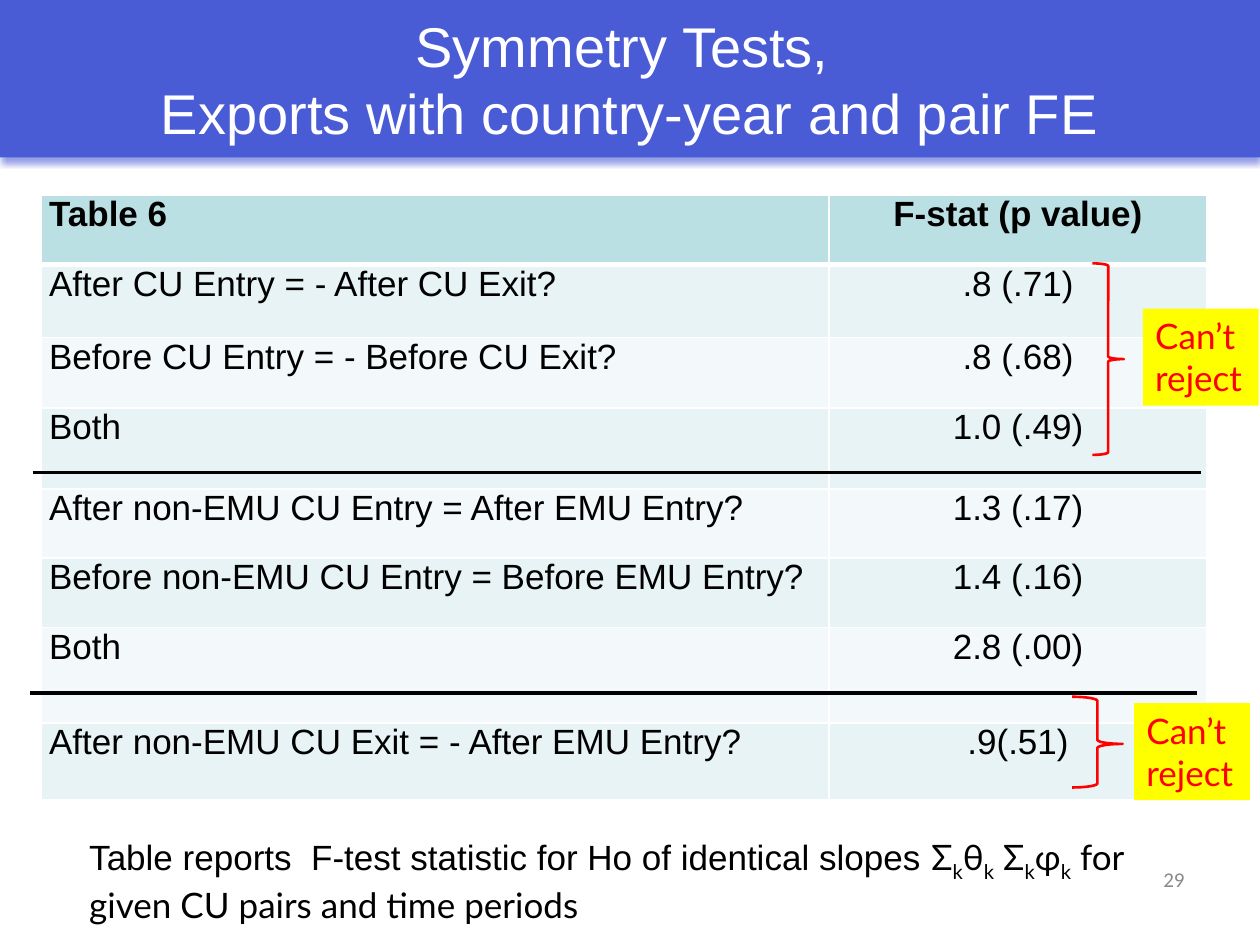
from dataclasses import dataclass

from lxml import etree
from pptx import Presentation
from pptx import util as u
from pptx.dml.color import RGBColor
from pptx.enum import shapes, text
from pptx.oxml import ns

Inches, Pt = u.Inches, u.Pt


@dataclass(frozen=True)
class Theme:
    banner: str = "4A5BD6"
    header: str = "BBE0E3"
    bands: tuple = ("E7F3F4", "F3F9FA")
    white: str = "FFFFFF"
    ink: str = "000000"
    accent: str = "FF0000"
    highlight: str = "FFFF00"
    muted: str = "898989"
    title_size: int = 32
    body_size: int = 20
    number_size: int = 12
    main_font: str = "Arial"
    note_font: str = "Lato"
    number_font: str = "Calibri"


THEME = Theme()

TESTS = [
    ("Table 6", "F-stat (p value)"),
    ("After CU Entry = - After CU Exit?", ".8 (.71)"),
    ("Before CU Entry = - Before CU Exit?", ".8 (.68)"),
    ("Both", "1.0 (.49)"),
    ("After non-EMU CU Entry = After EMU Entry?", "1.3 (.17)"),
    ("Before non-EMU CU Entry = Before EMU Entry?", "1.4 (.16)"),
    ("Both", "2.8 (.00)"),
    ("After non-EMU CU Exit = - After EMU Entry?", ".9(.51)"),
]
COLUMN_WIDTHS = (6.25, 3)
ROW_HEIGHTS = (0.55, 0.58, 0.56, 0.64, 0.55, 0.55, 0.76, 0.61)


def box(*lengths):
    return [Inches(length) for length in lengths]


def apply(target, formats):
    for name, value in formats.items():
        setattr(target, name, value)


def paint(fill, color):
    fill.solid()
    fill.fore_color.rgb = RGBColor.from_string(color)


def style_font(font, size, face, color, bold=False):
    apply(font, {"size": Pt(size), "name": face, "bold": bold, "italic": False})
    font.color.rgb = RGBColor.from_string(color)


def add_child(parent, tag, **attributes):
    return etree.SubElement(parent, ns.qn(tag), attributes)


def add_title(slide, wording):
    title = slide.shapes.title
    apply(title, dict(zip(("left", "top", "width", "height"), box(0, 0, 10, 1.25))))
    paint(title.fill, THEME.banner)
    frame = title.text_frame
    frame.text = wording
    apply(frame, {"word_wrap": True, "auto_size": text.MSO_AUTO_SIZE.NONE,
                  "vertical_anchor": text.MSO_ANCHOR.MIDDLE})
    paragraph = frame.paragraphs[0]
    paragraph.alignment = text.PP_ALIGN.CENTER
    for run in paragraph.runs:
        style_font(run.font, THEME.title_size, THEME.main_font, THEME.white)
    # Soft shadow below the banner
    effects = add_child(title._element.spPr, "a:effectLst")
    shadow = add_child(effects, "a:outerShdw", blurRad="40000", dist="40000",
                       dir="5400000", rotWithShape="0")
    color = add_child(shadow, "a:srgbClr", val=THEME.banner)
    add_child(color, "a:alpha", val="60000")


def border_cell(cell, bottom_width):
    properties = cell._tc.get_or_add_tcPr()
    widths = {"a:lnL": 1, "a:lnR": 1, "a:lnT": 1, "a:lnB": bottom_width}
    for position, (tag, width) in enumerate(widths.items()):
        edge = etree.Element(ns.qn(tag), w=str(Pt(width)))
        add_child(add_child(edge, "a:solidFill"), "a:srgbClr", val=THEME.white)
        properties.insert(position, edge)


def add_test_table(slide):
    table = slide.shapes.add_table(len(TESTS), len(COLUMN_WIDTHS),
                                   *box(0.33, 1.55, 9.25, 4.79)).table
    for column, width in zip(table.columns, COLUMN_WIDTHS):
        column.width = Inches(width)
    alignments = (text.PP_ALIGN.LEFT, text.PP_ALIGN.CENTER)
    margins = {"margin_left": Inches(0.06), "margin_right": Inches(0.06),
               "margin_top": 0, "margin_bottom": 0}
    for row, (height, test) in enumerate(zip(ROW_HEIGHTS, TESTS)):
        table.rows[row].height = Inches(height)
        is_header = row == 0
        for column, wording in enumerate(test):
            cell = table.cell(row, column)
            cell.text = wording
            apply(cell, margins)
            paint(cell.fill, THEME.header if is_header else THEME.bands[(row - 1) % 2])
            border_cell(cell, 3 if is_header else 1)
            paragraph = cell.text_frame.paragraphs[0]
            paragraph.alignment = alignments[column]
            style_font(paragraph.runs[0].font, THEME.body_size, THEME.main_font,
                       THEME.ink, is_header)


def add_divider(slide, left, right, y):
    divider = slide.shapes.add_connector(shapes.MSO_CONNECTOR.STRAIGHT,
                                         *box(left, y, right, y))
    divider.line.width = Pt(2)
    divider.line.color.rgb = RGBColor.from_string(THEME.ink)
    add_child(divider._element.spPr, "a:effectLst")


def add_text(slide, place, runs, size, color, align=text.PP_ALIGN.LEFT):
    """Runs are (wording, font, baseline) triples."""
    label = slide.shapes.add_textbox(*box(*place))
    label.text_frame.word_wrap = True
    paragraph = label.text_frame.paragraphs[0]
    paragraph.alignment = align
    for wording, face, baseline in runs:
        run = paragraph.add_run()
        run.text = wording
        style_font(run.font, size, face, color)
        if baseline:
            run._r.get_or_add_rPr().set("baseline", str(baseline * 1000))
    return label


def add_verdict(slide, left, top):
    verdict = add_text(slide, (left, top, 0.92, 0.77),
                       [("Can’t reject", THEME.note_font, 0)],
                       THEME.body_size, THEME.accent)
    paint(verdict.fill, THEME.highlight)


def add_brace(slide, place, adjustments=()):
    brace = slide.shapes.add_shape(shapes.MSO_SHAPE.RIGHT_BRACE, *box(*place))
    for index, value in enumerate(adjustments):
        brace.adjustments[index] = value
    brace.shadow.inherit = False
    brace.fill.background()
    brace.line.width = Pt(1.5)
    brace.line.color.rgb = RGBColor.from_string(THEME.accent)


def add_table_note(slide):
    runs = [("Table reports  F-test statistic for Ho of identical slopes ",
             THEME.main_font, 0)]
    for symbol in ("Σ", "θ", " Σ", "φ"):
        runs += [(symbol, THEME.note_font, 0), ("k", THEME.note_font, -25)]
    runs.append((" for given CU pairs and time periods", THEME.note_font, 0))
    add_text(slide, (0.61, 6.58, 8.92, 0.77), runs, THEME.body_size, THEME.ink)


def main():
    deck = Presentation()
    apply(deck, {"slide_width": Inches(10), "slide_height": Inches(7.5)})
    slide = deck.slides.add_slide(deck.slide_layouts.get_by_name("Title Only"))

    # Title and results
    add_title(slide, "Symmetry Tests, \vExports with country-year and pair FE")
    add_test_table(slide)

    # Page number
    add_text(slide, (7.17, 6.83, 2.33, 0.52), [("29", THEME.number_font, 0)],
             THEME.number_size, THEME.muted, text.PP_ALIGN.RIGHT)

    # Dividers between test groups
    add_divider(slide, 0.24, 9.5, 5.5)
    add_divider(slide, 0.26, 9.53, 3.75)

    # Note and verdicts
    add_table_note(slide)
    add_verdict(slide, 9.07, 2.45)
    add_verdict(slide, 9, 5.58)
    add_brace(slide, (8.67, 2.09, 0.25, 1.52))
    add_brace(slide, (8.51, 5.53, 0.4, 0.72), (0.08, 0.52))

    deck.save("out.pptx")


if __name__ == "__main__":
    main()
